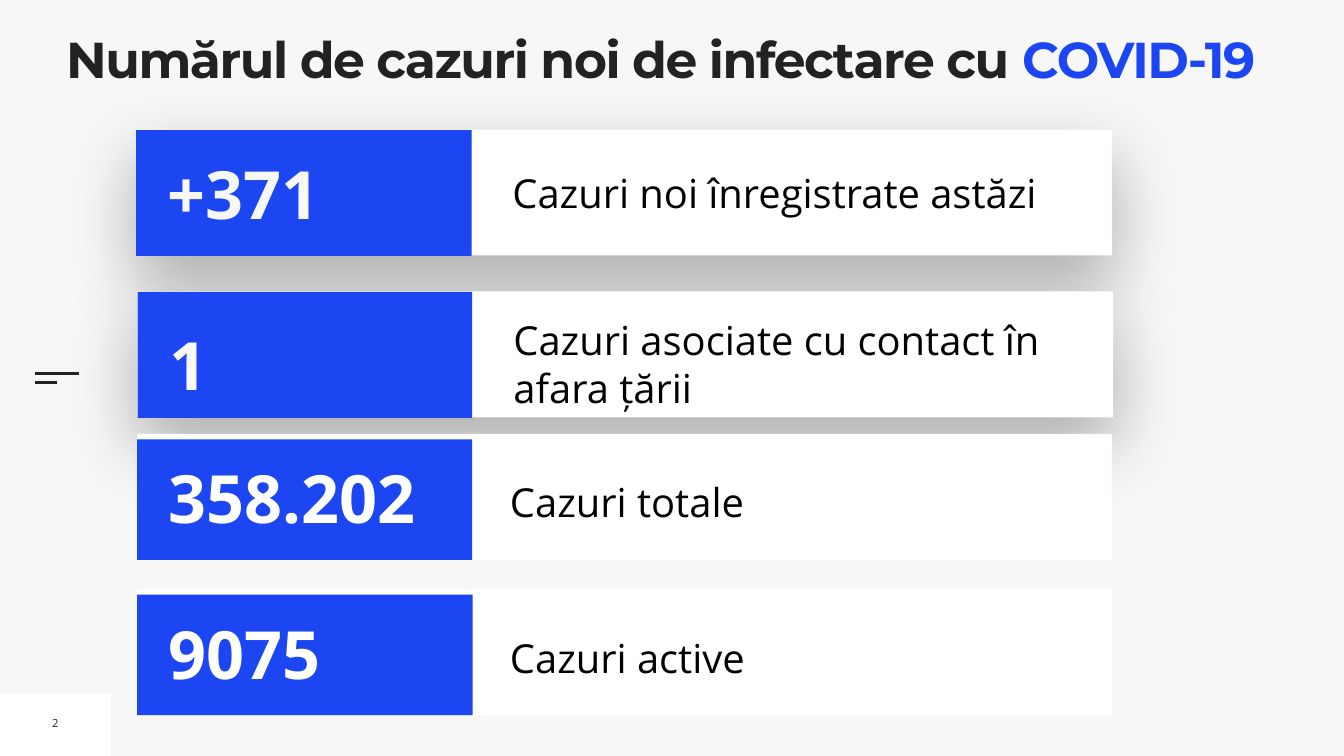
from dataclasses import dataclass

from lxml import etree
from pptx import Presentation
from pptx.dml.color import RGBColor
from pptx.enum.shapes import MSO_CONNECTOR, MSO_SHAPE
from pptx.enum.text import MSO_ANCHOR, MSO_AUTO_SIZE, PP_ALIGN
from pptx.oxml.ns import qn
from pptx.util import Inches, Pt

RECT = MSO_SHAPE.RECTANGLE
LINE = MSO_CONNECTOR.STRAIGHT
TOP, MIDDLE = MSO_ANCHOR.TOP, MSO_ANCHOR.MIDDLE
FIT, FIXED = MSO_AUTO_SIZE.SHAPE_TO_FIT_TEXT, MSO_AUTO_SIZE.NONE
LEFT, CENTER = PP_ALIGN.LEFT, PP_ALIGN.CENTER


@dataclass(frozen=True)
class Theme:
    back: str = "F7F7F7"
    card: str = "FEFFFF"
    blue: str = "1D46F3"
    ink: str = "222222"
    black: str = "000000"
    white: str = "FFFFFF"
    head: str = "Montserrat"
    body: str = "Open Sans"
    title: int = 72
    value: int = 95
    label: int = 57
    page: int = 16


@dataclass(frozen=True)
class Box:
    left: float
    top: float
    width: float
    height: float

    def place(self) -> tuple:
        return tuple(Inches(n) for n in
                     (self.left, self.top, self.width, self.height))


@dataclass(frozen=True)
class Style:
    size: int
    color: str
    font: str
    bold: bool = False


@dataclass(frozen=True)
class Row:
    value: str
    label: str
    card: Box
    band: Box
    figure: Box
    note: Box
    raised: bool  # shadow under the card, padded label


THEME = Theme()

# Drawn from back to front
ROWS = [
    Row("9075", "Cazuri active",
        Box(2.72, 11.69, 19.35, 2.5), Box(2.72, 11.8, 6.66, 2.39),
        Box(3.25, 12.05, 6.03, 1.8), Box(10.12, 12.27, 11.58, 1.25), False),
    Row("+371", "Cazuri noi înregistrate astăzi",
        Box(2.7, 2.57, 19.37, 2.5), Box(2.7, 2.58, 6.66, 2.5),
        Box(3.23, 2.92, 6.03, 1.8), Box(10.07, 3.24, 11.76, 1.16), True),
    Row("1", "Cazuri asociate cu contact în afara țării",
        Box(2.72, 5.78, 19.37, 2.5), Box(2.73, 5.79, 6.64, 2.5),
        Box(3.26, 6.32, 6.03, 1.8), Box(10.09, 6.16, 11.76, 2.12), True),
    Row("358.202", "Cazuri totale",
        Box(2.72, 8.61, 19.35, 2.5), Box(2.72, 8.72, 6.65, 2.39),
        Box(3.25, 8.96, 6.03, 1.8), Box(10.12, 9.25, 11.58, 1.12), False),
]


def add_run(para, text: str, style: Style):
    run = para.add_run()
    run.text = text
    font = run.font
    font.size, font.name, font.bold = Pt(style.size), style.font, style.bold
    font.color.rgb = RGBColor.from_string(style.color)
    return run


def set_frame(frame, pad: float, anchor, fit, wrap: bool = True) -> None:
    frame.margin_left = frame.margin_right = Inches(pad)
    frame.margin_top = frame.margin_bottom = Inches(pad)
    frame.vertical_anchor = anchor
    frame.auto_size = fit
    frame.word_wrap = wrap


def add_rect(shapes, box: Box, color: str):
    rect = shapes.add_shape(RECT, *box.place())
    rect.shadow.inherit = False
    rect.fill.solid()
    rect.fill.fore_color.rgb = RGBColor.from_string(color)
    rect.line.fill.background()
    return rect


def add_shadow(shape) -> None:
    effects = shape.element.spPr.find(qn("a:effectLst"))
    outer = etree.SubElement(
        effects, qn("a:outerShdw"), blurRad=str(Pt(100)),
        dist=str(Pt(40)), dir="5400000", algn="ctr", rotWithShape="0")
    color = etree.SubElement(outer, qn("a:srgbClr"), val=THEME.black)
    etree.SubElement(color, qn("a:alpha"), val="30000")


def add_text(shapes, box: Box, text: str, style: Style, pad: float = 0.1,
             align=LEFT, wrap: bool = True):
    area = shapes.add_textbox(*box.place())
    set_frame(area.text_frame, pad, MIDDLE, FIT, wrap)
    para = area.text_frame.paragraphs[0]
    para.alignment = align
    add_run(para, text, style)
    return para


def add_line(shapes, left: float, top: float, width: float) -> None:
    line = shapes.add_connector(LINE, Inches(left), Inches(top),
                                Inches(left + width), Inches(top))
    line.line.color.rgb = RGBColor.from_string(THEME.ink)
    line.line.width = Pt(3)
    etree.SubElement(line.element.spPr, qn("a:effectLst"))


def add_row(slide, row: Row) -> None:
    shapes = slide.shapes.add_group_shape().shapes
    card = add_rect(shapes, row.card, THEME.card)
    if row.raised:
        add_shadow(card)
    para = add_text(shapes, row.note, row.label,
                    Style(THEME.label, THEME.black, THEME.body),
                    0.1 if row.raised else 0)
    if not row.raised:
        para.line_spacing, para.space_before = 1.3, Pt(20)
    add_rect(shapes, row.band, THEME.blue)
    tint = THEME.back if row.raised else THEME.white
    add_text(shapes, row.figure, row.value,
             Style(THEME.value, tint, THEME.body, True))


def add_title(slide) -> None:
    title = slide.shapes.title
    title.left, title.top, title.width, title.height = Box(
        1.31, 0.78, 23.94, 1.58).place()
    set_frame(title.text_frame, 0, TOP, FIXED)
    para = title.text_frame.paragraphs[0]
    para.alignment, para.line_spacing = LEFT, 0.8
    for text, color in (("Numărul de cazuri noi de infectare cu ", THEME.ink),
                        ("COVID-19", THEME.blue)):
        run = add_run(para, text, Style(THEME.title, color, THEME.head, True))
        run.font._element.set("spc", "-200")


def main() -> None:
    deck = Presentation()
    deck.slide_width, deck.slide_height = Inches(26.67), Inches(15)
    slide = deck.slides.add_slide(deck.slide_layouts[5])
    slide.background.fill.solid()
    slide.background.fill.fore_color.rgb = RGBColor.from_string(THEME.back)

    # Page corner and side marks
    add_rect(slide.shapes, Box(0, 13.76, 2.2, 1.24), THEME.card)
    add_line(slide.shapes, 0.69, 7.41, 0.88)
    add_line(slide.shapes, 0.69, 7.59, 0.44)
    add_text(slide.shapes, Box(0.93, 14.09, 0.34, 0.51), "2",
             Style(THEME.page, THEME.ink, THEME.body), align=CENTER, wrap=False)

    # Heading and figures
    add_title(slide)
    for row in ROWS:
        add_row(slide, row)
    deck.save("out.pptx")


if __name__ == "__main__":
    main()
